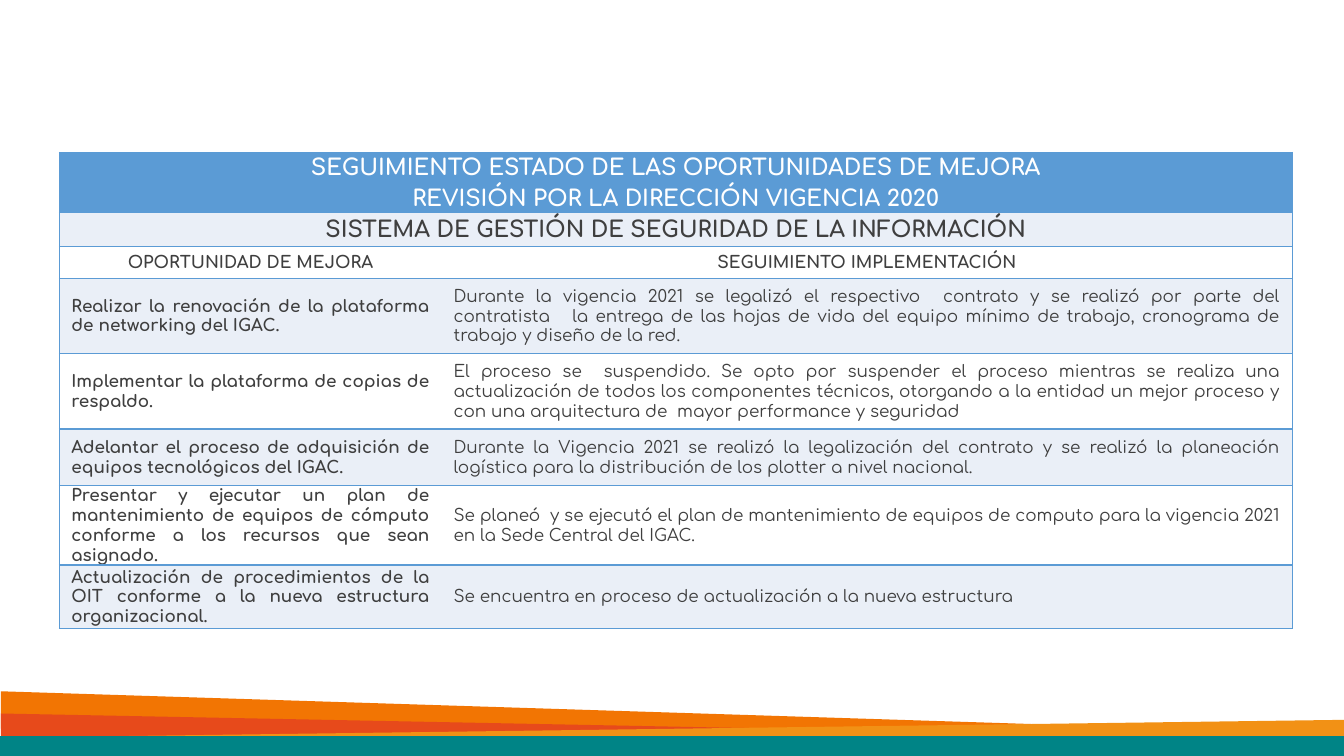
import pptx
import pptx.dml.color
import pptx.enum.text
import pptx.oxml
import pptx.oxml.ns
import pptx.util

Cm = pptx.util.Cm
Pt = pptx.util.Pt
ALIGN = pptx.enum.text.PP_ALIGN

COLOURS = {
    "orange": "F27503",
    "red": "E74A1B",
    "amber": "F29115",
    "teal": "008486",
    "blue": "5B9BD5",
    "pale": "EAEFF7",
    "white": "FFFFFF",
    "text": "3F3F3F",
}

FOOTER_BANDS = [
    ("orange", [(0.02, 18.36), (0.02, 17.42), (29.62, 18.36)]),
    ("red", [(0.02, 18.64), (0.02, 17.98), (33.87, 18.64)]),
    ("amber", [(33.87, 18.59), (33.87, 18.14), (0.02, 18.59)]),
    ("teal", [(-0.15, 18.54), (33.87, 18.54), (33.87, 19.05), (-0.15, 19.05)]),
]

COLUMN_WIDTHS = [9.63, 21.44]
ROW_HEIGHTS = [1.52, 0.86, 0.79, 1.9, 1.9, 1.42, 1.6, 1.6]

TITLE_LINES = [
    "SEGUIMIENTO ESTADO DE LAS OPORTUNIDADES DE MEJORA",
    "REVISIÓN POR LA DIRECCIÓN VIGENCIA 2020",
]
SYSTEM_NAME = "SISTEMA DE GESTIÓN DE SEGURIDAD DE LA INFORMACIÓN"
HEADINGS = ["OPORTUNIDAD DE MEJORA", "SEGUIMIENTO IMPLEMENTACIÓN"]
IMPROVEMENTS = [
    ("Realizar la renovación de la plataforma de networking del IGAC.",
     "Durante la vigencia 2021 se legalizó el respectivo  contrato y se realizó por parte del "
     "contratista   la entrega de las hojas de vida del equipo mínimo de trabajo, cronograma de "
     "trabajo y diseño de la red."),
    ("Implementar la plataforma de copias de respaldo.",
     "El proceso se  suspendido. Se opto por suspender el proceso mientras se realiza una "
     "actualización de todos los componentes técnicos, otorgando a la entidad un mejor proceso y "
     "con una arquitectura de  mayor performance y seguridad"),
    ("Adelantar el proceso de adquisición de equipos tecnológicos del IGAC.",
     "Durante la Vigencia 2021 se realizó la legalización del contrato y se realizó la planeación "
     "logística para la distribución de los plotter a nivel nacional."),
    ("Presentar y ejecutar un plan de mantenimiento de equipos de cómputo conforme a los "
     "recursos que sean asignado.",
     "Se planeó  y se ejecutó el plan de mantenimiento de equipos de computo para la vigencia "
     "2021 en la Sede Central del IGAC."),
    ("Actualización de procedimientos de la OIT conforme a la nueva estructura organizacional.",
     "Se encuentra en proceso de actualización a la nueva estructura"),
]


def colour(name):
    return pptx.dml.color.RGBColor.from_string(COLOURS[name])


class SlideBuilder:
    font = "Comfortaa"
    border_width = Pt(1)

    def __init__(self, slide):
        self.slide = slide

    def polygon(self, fill, points):
        corners = [(Cm(x), Cm(y)) for x, y in points]
        builder = self.slide.shapes.build_freeform(*corners[0])
        builder.add_line_segments(corners[1:], close=True)
        shape = builder.convert_to_shape()
        shape.shadow.inherit = False
        shape.fill.solid()
        shape.fill.fore_color.rgb = colour(fill)
        shape.line.fill.background()

    def table(self, left, top, widths, heights):
        frame = self.slide.shapes.add_table(
            len(heights), len(widths), Cm(left), Cm(top), Cm(sum(widths)), Cm(sum(heights)))
        table = frame.table
        table.first_row = False
        table.horz_banding = False
        for column, width in zip(table.columns, widths):
            column.width = Cm(width)
        for row, height in zip(table.rows, heights):
            row.height = Cm(height)
        return table

    def borders(self, cell, sides):
        """Draw the named sides (of L, R, T, B) and clear the others."""
        properties = cell._tc.get_or_add_tcPr()
        for side in "LRTB":
            if side in sides:
                paint = f'<a:solidFill><a:srgbClr val="{COLOURS["blue"]}"/></a:solidFill>'
            else:
                paint = "<a:noFill/>"
            properties.append(pptx.oxml.parse_xml(
                f'<a:ln{side} {pptx.oxml.ns.nsdecls("a")} w="{self.border_width}">'
                f'{paint}</a:ln{side}>'))

    def cell(self, cell, lines, fill, sides, size=12, ink="text", bold=True,
             align=ALIGN.CENTER, margin=0.1):
        self.borders(cell, sides)
        cell.fill.solid()
        cell.fill.fore_color.rgb = colour(fill)
        cell.vertical_anchor = pptx.enum.text.MSO_ANCHOR.MIDDLE
        cell.margin_left = cell.margin_right = Cm(margin)
        cell.margin_top = cell.margin_bottom = 0
        for index, line in enumerate(lines):
            para = cell.text_frame.add_paragraph() if index else cell.text_frame.paragraphs[0]
            para.alignment = align
            para.line_spacing = 1.07
            para.space_after = Pt(8 if index == len(lines) - 1 else 3)
            span = para.add_run()
            span.text = line
            span.font.name = self.font
            span.font.size = Pt(size)
            span.font.bold = bold
            span.font.color.rgb = colour(ink)

    def banner(self, table, row, lines, fill, ink):
        """Fill a row whose cells are merged across the table."""
        first, last = table.cell(row, 0), table.cell(row, 1)
        first.merge(last)
        self.cell(first, lines, fill, "LRTB", size=16, ink=ink)
        self.borders(last, "LRTB")


def main():
    deck = pptx.Presentation()
    deck.slide_width, deck.slide_height = Cm(33.87), Cm(19.05)
    page = SlideBuilder(deck.slides.add_slide(deck.slide_layouts[6]))

    for fill, points in FOOTER_BANDS:
        page.polygon(fill, points)

    table = page.table(1.5, 3.84, COLUMN_WIDTHS, ROW_HEIGHTS)
    page.banner(table, 0, TITLE_LINES, "blue", "white")
    page.banner(table, 1, [SYSTEM_NAME], "pale", "text")
    outer_sides = ["LTB", "RTB"]
    for column, (heading, sides) in enumerate(zip(HEADINGS, outer_sides)):
        page.cell(table.cell(2, column), [heading], "white", sides)
    for row, texts in enumerate(IMPROVEMENTS, start=3):
        fill = "pale" if row % 2 else "white"
        for column, (text, sides) in enumerate(zip(texts, outer_sides)):
            page.cell(table.cell(row, column), [text], fill, sides,
                      bold=column == 0, align=ALIGN.JUSTIFY, margin=0.3)

    deck.save("out.pptx")


if __name__ == "__main__":
    main()
